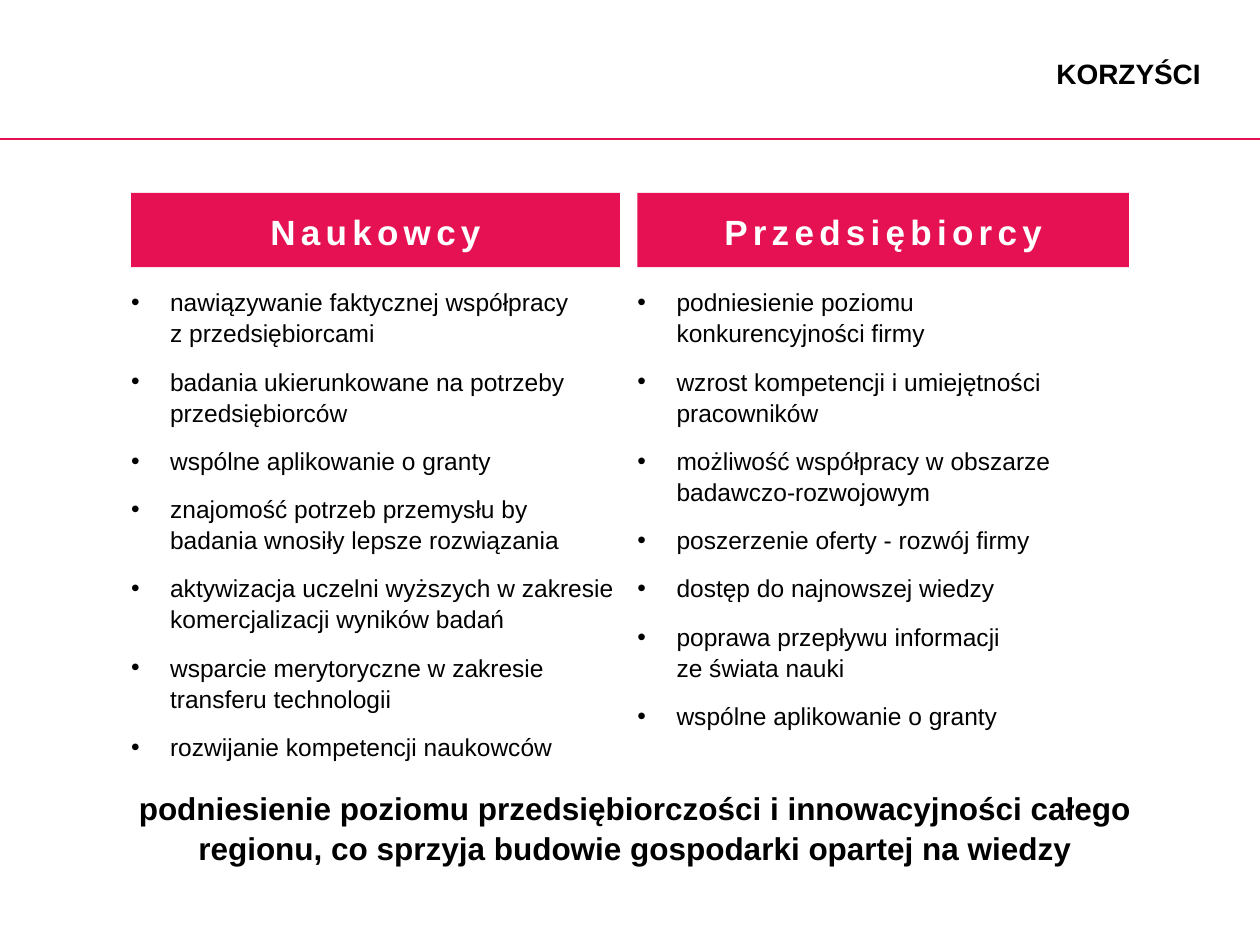
from lxml import etree
from pptx import Presentation
from pptx.dml.color import RGBColor
from pptx.enum.shapes import MSO_CONNECTOR, MSO_SHAPE
from pptx.enum.text import MSO_ANCHOR, PP_ALIGN
from pptx.oxml.ns import qn
from pptx.util import Inches, Pt

STRAIGHT = MSO_CONNECTOR.STRAIGHT
RECTANGLE = MSO_SHAPE.RECTANGLE
TOP, MIDDLE = MSO_ANCHOR.TOP, MSO_ANCHOR.MIDDLE
LEFT, CENTER, RIGHT = PP_ALIGN.LEFT, PP_ALIGN.CENTER, PP_ALIGN.RIGHT

TITLE = "KORZYŚCI"
GROUPS = [
    (1.04, 3.88, "Naukowcy", [
        "nawiązywanie faktycznej współpracy\nz przedsiębiorcami",
        "badania ukierunkowane na potrzeby przedsiębiorców",
        "wspólne aplikowanie o granty",
        "znajomość potrzeb przemysłu by badania wnosiły lepsze rozwiązania",
        "aktywizacja uczelni wyższych w zakresie komercjalizacji wyników badań",
        "wsparcie merytoryczne w zakresie transferu technologii",
        "rozwijanie kompetencji naukowców",
    ]),
    (5.06, 3.9, "Przedsiębiorcy", [
        "podniesienie poziomu\nkonkurencyjności firmy",
        "wzrost kompetencji i umiejętności pracowników",
        "możliwość współpracy w obszarze badawczo-rozwojowym",
        "poszerzenie oferty - rozwój firmy",
        "dostęp do najnowszej wiedzy",
        "poprawa przepływu informacji\nze świata nauki",
        "wspólne aplikowanie o granty",
    ]),
]
CONCLUSION = ("podniesienie poziomu przedsiębiorczości i innowacyjności całego "
              "regionu, co sprzyja budowie gospodarki opartej na wiedzy")
ACCENT, BLACK, WHITE = "E61152", "000000", "FFFFFF"
INDENT = Inches(0.31)


def color(value):
    return RGBColor.from_string(value)


def add_bullet(paragraph):
    properties = paragraph._p.get_or_add_pPr()
    properties.set("marL", str(INDENT))
    properties.set("indent", str(-INDENT))
    etree.SubElement(properties, qn("a:buFont")).set("typeface", "Arial")
    etree.SubElement(properties, qn("a:buChar")).set("char", "•")


def write(shape, lines, size, align=LEFT, fill=BLACK, bold=False, insets=(0, 0),
          anchor=TOP, spacing=1.05, bullets=False, tracking=0):
    frame = shape.text_frame
    frame.word_wrap = True
    frame.vertical_anchor = anchor
    frame.margin_left = frame.margin_right = Inches(insets[0])
    frame.margin_top = frame.margin_bottom = Inches(insets[1])
    for index, line in enumerate(lines):
        paragraph = frame.add_paragraph() if index else frame.paragraphs[0]
        paragraph.text = line
        paragraph.alignment = align
        paragraph.line_spacing = spacing
        if index:
            paragraph.space_before = Pt(10)
        if bullets:
            add_bullet(paragraph)
        for run in paragraph.runs:
            run.font.name = "Arial"
            run.font.size = Pt(size)
            run.font.bold = bold
            run.font.color.rgb = color(fill)
            if tracking:
                run._r.get_or_add_rPr().set("spc", str(tracking * 100))


def main():
    deck = Presentation()
    deck.slide_width, deck.slide_height = Inches(10), Inches(7.5)
    slide = deck.slides.add_slide(deck.slide_layouts[6])
    shapes = slide.shapes

    def text_box(left, top, width, height):
        return shapes.add_textbox(*map(Inches, (left, top, width, height)))

    rule = shapes.add_connector(STRAIGHT, 0, Inches(1.1), Inches(10), Inches(1.1))
    rule.line.color.rgb = color(ACCENT)
    rule.line.width = Pt(1.25)
    etree.SubElement(rule._element.spPr, qn("a:effectLst"))

    write(text_box(2.06, 0.4, 7.47, 0.4), [TITLE], 16, RIGHT, bold=True,
          anchor=MIDDLE, spacing=0.9)

    for left, width, heading, benefits in GROUPS:
        band = shapes.add_shape(RECTANGLE, *map(Inches, (left, 1.53, width, 0.59)))
        band.shadow.inherit = False
        band.fill.solid()
        band.fill.fore_color.rgb = color(ACCENT)
        band.line.fill.background()
        write(band, [heading], 20, CENTER, WHITE, True, (0, 0.12), tracking=3)
        write(text_box(left, 2.27, width, 4.27), benefits, 14, bullets=True)

    write(text_box(0.8, 6.2, 8.48, 1.01), [CONCLUSION], 18, CENTER, bold=True,
          insets=(0.1, 0.05))
    deck.save("out.pptx")


if __name__ == "__main__":
    main()
